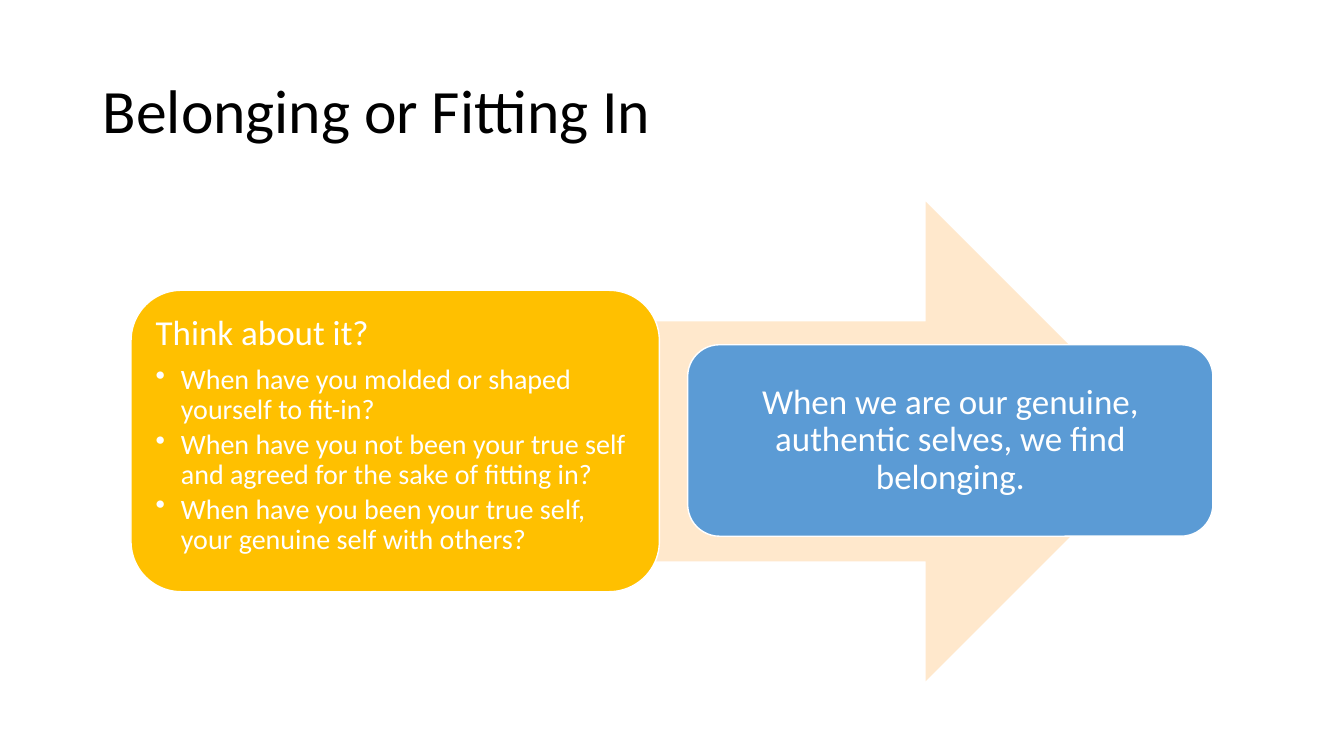
"""Build the slide on belonging or fitting in."""
from dataclasses import dataclass

from lxml import etree
from pptx import Presentation
from pptx.dml.color import RGBColor
from pptx.enum.shapes import MSO_SHAPE
from pptx.enum.text import MSO_ANCHOR, MSO_AUTO_SIZE, PP_ALIGN
from pptx.oxml.ns import qn
from pptx.util import Pt

SCALE = 9144
BLACK = RGBColor(0x00, 0x00, 0x00)
WHITE = RGBColor(0xFF, 0xFF, 0xFF)
PEACH = RGBColor(0xFF, 0xE8, 0xCC)
GOLD = RGBColor(0xFF, 0xC0, 0x00)
BLUE = RGBColor(0x5B, 0x9B, 0xD5)
ARROW, ROUND = MSO_SHAPE.RIGHT_ARROW, MSO_SHAPE.ROUNDED_RECTANGLE
LEFT, CENTER = PP_ALIGN.LEFT, PP_ALIGN.CENTER
TOP, MIDDLE = MSO_ANCHOR.TOP, MSO_ANCHOR.MIDDLE
FIXED = MSO_AUTO_SIZE.NONE


@dataclass(frozen=True)
class Line:
    """One paragraph and its look."""
    text: str
    size: int
    color: RGBColor = WHITE
    after: int = 0
    bullet: bool = False


@dataclass(frozen=True)
class Card:
    """A rounded box with its text."""
    box: tuple[int, int, int, int]
    fill: RGBColor
    align: PP_ALIGN
    anchor: MSO_ANCHOR
    lines: tuple[Line, ...]


TITLE = Line("Belonging or Fitting In", 44, BLACK)
QUESTIONS = (
    "When have you molded or shaped yourself to fit-in?",
    "When have you not been your true self and agreed for the sake of fitting in?",
    "When have you been your true self, your genuine self with others?",
)
CARDS = (
    Card((130, 288, 524, 299), GOLD, LEFT, TOP,
         (Line("Think about it?", 25, after=9),
          *(Line(text, 20, after=3, bullet=True) for text in QUESTIONS))),
    Card((682, 342, 521, 190), BLUE, CENTER, MIDDLE,
         (Line("When we are our genuine, authentic selves, we find belonging.", 25),)),
)


def px(count: int) -> int:
    """Turn px into EMU."""
    return count * SCALE


def format_all(target, values: dict) -> None:
    """Set each value on the target."""
    for name, value in values.items():
        setattr(target, name, value)


def add_bullet(para) -> None:
    """Give the paragraph a hanging bullet."""
    props = para._p.get_or_add_pPr()
    props.set("marL", str(px(25)))
    props.set("indent", str(px(-25)))
    etree.SubElement(props, qn("a:buChar")).set("char", "•")


def write(frame, lines: tuple[Line, ...], align: PP_ALIGN, anchor: MSO_ANCHOR, inset: int) -> None:
    """Fill a text frame with lines."""
    format_all(frame, {"word_wrap": True, "auto_size": FIXED, "vertical_anchor": anchor,
                       "margin_left": px(inset), "margin_right": px(inset),
                       "margin_top": px(inset), "margin_bottom": px(inset)})
    for index, line in enumerate(lines):
        para = frame.add_paragraph() if index else frame.paragraphs[0]
        format_all(para, {"alignment": align, "line_spacing": 0.9,
                          "space_before": Pt(0), "space_after": Pt(line.after)})
        if line.bullet:
            add_bullet(para)
        run = para.add_run()
        run.text = line.text
        format_all(run.font, {"name": "Calibri", "size": Pt(line.size)})
        run.font.color.rgb = line.color


def add_shape(slide, kind: MSO_SHAPE, box: tuple[int, int, int, int], fill: RGBColor):
    """Add a flat shape without an outline."""
    shape = slide.shapes.add_shape(kind, *map(px, box))
    shape.shadow.inherit = False
    shape.fill.solid()
    shape.fill.fore_color.rgb = fill
    shape.line.fill.background()
    return shape


def add_card(slide, card: Card) -> None:
    """Draw a card with a white outline."""
    shape = add_shape(slide, ROUND, card.box, card.fill)
    shape.line.color.rgb = WHITE
    shape.line.width = Pt(1)
    write(shape.text_frame, card.lines, card.align, card.anchor, 10)


def main() -> None:
    """Build and save the deck."""
    deck = Presentation()
    format_all(deck, {"slide_width": px(1333), "slide_height": px(750)})
    slide = deck.slides.add_slide(deck.slide_layouts.get_by_name("Title Only"))
    title = slide.shapes.title
    format_all(title, {"left": px(92), "top": px(40), "width": px(1150), "height": px(145)})
    write(title.text_frame, (TITLE,), LEFT, MIDDLE, 10)
    add_shape(slide, ARROW, (178, 200, 978, 476), PEACH)
    for card in CARDS:
        add_card(slide, card)
    deck.save("out.pptx")


if __name__ == "__main__":
    main()
